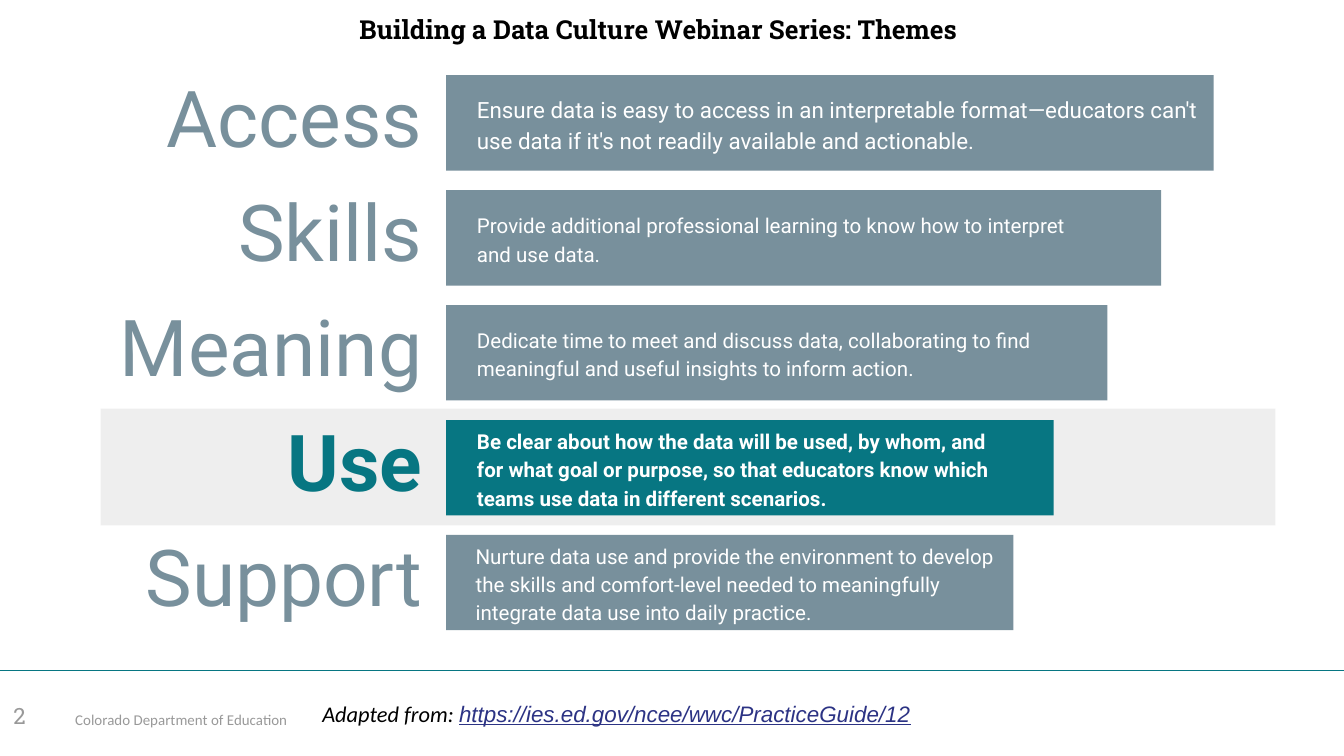
from dataclasses import dataclass

from lxml.etree import SubElement
from pptx import Presentation
from pptx.dml.color import RGBColor
from pptx.enum.shapes import MSO_CONNECTOR as CONNECTOR, MSO_SHAPE as SHAPE
from pptx.enum.text import MSO_ANCHOR as ANCHOR, MSO_AUTO_SIZE as AUTO, PP_ALIGN as ALIGN
from pptx.oxml.ns import qn
from pptx.util import Inches, Pt

SLATE = RGBColor(0x78, 0x90, 0x9C)
TEAL = RGBColor(0x07, 0x76, 0x82)
BAND = RGBColor(0xEE, 0xEE, 0xEE)
GRAY = RGBColor(0x99, 0x99, 0x99)
LINK = RGBColor(0x2C, 0x33, 0x84)
BLACK = RGBColor(0, 0, 0)
WHITE = RGBColor(0xFF, 0xFF, 0xFF)

HEADING_FONT, BODY_FONT, FOOTER_FONT = "Roboto Slab", "Roboto", "Calibri"


@dataclass
class Theme:
    name: str
    bar_width: float
    text_width: float
    text: str
    size: int = 11
    text_left: float = 3.45
    active: bool = False


THEMES = [
    Theme("Access", 5.71, 5.57,
          "Ensure data is easy to access in an interpretable format—educators "
          "can't use data if it's not readily available and actionable.", size=12),
    Theme("Skills", 5.32, 4.78,
          "Provide additional professional learning to know how to interpret "
          "and use data."),
    Theme("Meaning", 4.92, 4.71,
          "Dedicate time to meet and discuss data, collaborating to find "
          "meaningful and useful insights to inform action."),
    Theme("Use", 4.52, 4.21,
          "Be clear about how the data will be used, by whom, and for what goal "
          "or purpose, so that educators know which teams use data in different "
          "scenarios.", active=True),
    Theme("Support", 4.22, 4.22,
          "Nurture data use and provide the environment to develop the skills "
          "and comfort-level needed to meaningfully integrate data use into "
          "daily practice.", text_left=3.44),
]
BAR_LEFT, BAR_HEIGHT = 3.32, 0.71
FIRST_TOP, LAST_TOP = 0.56, 3.98
PITCH = (LAST_TOP - FIRST_TOP) / (len(THEMES) - 1)
LABEL_LEFT, LABEL_WIDTH, LABEL_HEIGHT = 0.56, 2.68, 0.61
LABEL_RISE = 0.01
TEXT_HEIGHT = 0.32


def add_run(paragraph, text, *, size, font, color, bold=False, italic=False, underline=False):
    run = paragraph.add_run()
    run.text = text
    run.font.size, run.font.name = Pt(size), font
    run.font.bold, run.font.italic, run.font.underline = bold, italic, underline
    run.font.color.rgb = color


class SlideBuilder:
    def __init__(self, slide):
        self.slide = slide
        self.shapes = slide.shapes

    def frame(self, shape, *, insets=(0, 0), anchor=ANCHOR.TOP, align=ALIGN.LEFT, spacing=None):
        """Lay out a text frame and return its first paragraph."""
        frame = shape.text_frame
        frame.word_wrap, frame.auto_size = True, AUTO.NONE
        frame.vertical_anchor = anchor
        frame.margin_left = frame.margin_right = Inches(insets[0])
        frame.margin_top = frame.margin_bottom = Inches(insets[1])
        paragraph = frame.paragraphs[0]
        paragraph.alignment, paragraph.line_spacing = align, spacing
        return paragraph

    def title(self, text, box):
        title = self.slide.shapes.title
        title.left, title.top, title.width, title.height = map(Inches, box)
        paragraph = self.frame(title, insets=(0.1, 0.1), align=ALIGN.CENTER)
        add_run(paragraph, text, size=14, font=HEADING_FONT, color=BLACK, bold=True)

    def text_box(self, box, **layout):
        return self.frame(self.shapes.add_textbox(*map(Inches, box)), **layout)

    def bar(self, box, color):
        bar = self.shapes.add_shape(SHAPE.RECTANGLE, *map(Inches, box))
        bar.shadow.inherit = False
        bar.fill.solid()
        bar.fill.fore_color.rgb = color
        bar.line.fill.background()

    def rule(self, top, width):
        rule = self.shapes.add_connector(
            CONNECTOR.STRAIGHT, 0, Inches(top), Inches(width), Inches(top))
        rule.line.color.rgb, rule.line.width = TEAL, Pt(0.75)
        SubElement(rule.element.spPr, qn("a:effectLst"))

    def theme_row(self, theme, top):
        color = TEAL if theme.active else SLATE
        middle = top + BAR_HEIGHT / 2
        self.shapes = self.slide.shapes.add_group_shape().shapes
        label = self.text_box(
            (LABEL_LEFT, middle - LABEL_HEIGHT / 2 - LABEL_RISE, LABEL_WIDTH, LABEL_HEIGHT),
            insets=(0.1, 0.05), anchor=ANCHOR.MIDDLE, align=ALIGN.RIGHT, spacing=0.9)
        add_run(label, theme.name, size=42, font=BODY_FONT, color=color, bold=theme.active)
        self.bar((BAR_LEFT, top, theme.bar_width, BAR_HEIGHT), color)
        detail = self.text_box(
            (theme.text_left, middle - TEXT_HEIGHT / 2, theme.text_width, TEXT_HEIGHT),
            insets=(0.1, 0.05), anchor=ANCHOR.MIDDLE, spacing=1.15)
        add_run(detail, theme.text, size=theme.size, font=BODY_FONT, color=WHITE,
                bold=theme.active)
        self.shapes = self.slide.shapes


def main():
    # Widescreen page, 16:9
    deck = Presentation()
    deck.slide_width = Inches(10)
    deck.slide_height = deck.slide_width * 9 // 16
    builder = SlideBuilder(deck.slides.add_slide(deck.slide_layouts[5]))

    # Title
    builder.title("Building a Data Culture Webinar Series: Themes", (0.24, 0, 9.32, 0.55))

    # Highlight band and theme rows
    builder.bar((0.75, 3.04, 8.74, 0.87), BAND)
    for index, theme in enumerate(THEMES):
        builder.theme_row(theme, FIRST_TOP + index * PITCH)

    # Footer
    builder.rule(4.99, 10.01)
    department = builder.text_box((0.56, 5.29, 3.23, 0.13))
    add_run(department, "Colorado Department of Education", size=8, font=FOOTER_FONT, color=GRAY)
    page_number = builder.text_box((0.1, 5.11, 0.6, 0.43), anchor=ANCHOR.MIDDLE)
    add_run(page_number, "2", size=12, font=HEADING_FONT, color=GRAY)
    source = builder.text_box((2.3, 5.11, 6.16, 0.4), insets=(0.1, 0.1))
    add_run(source, "Adapted from: ", size=12, font=FOOTER_FONT, color=BLACK, italic=True)
    add_run(source, "https://ies.ed.gov/ncee/wwc/PracticeGuide/12", size=12, font="Arial",
            color=LINK, italic=True, underline=True)

    deck.save("out.pptx")


if __name__ == "__main__":
    main()
